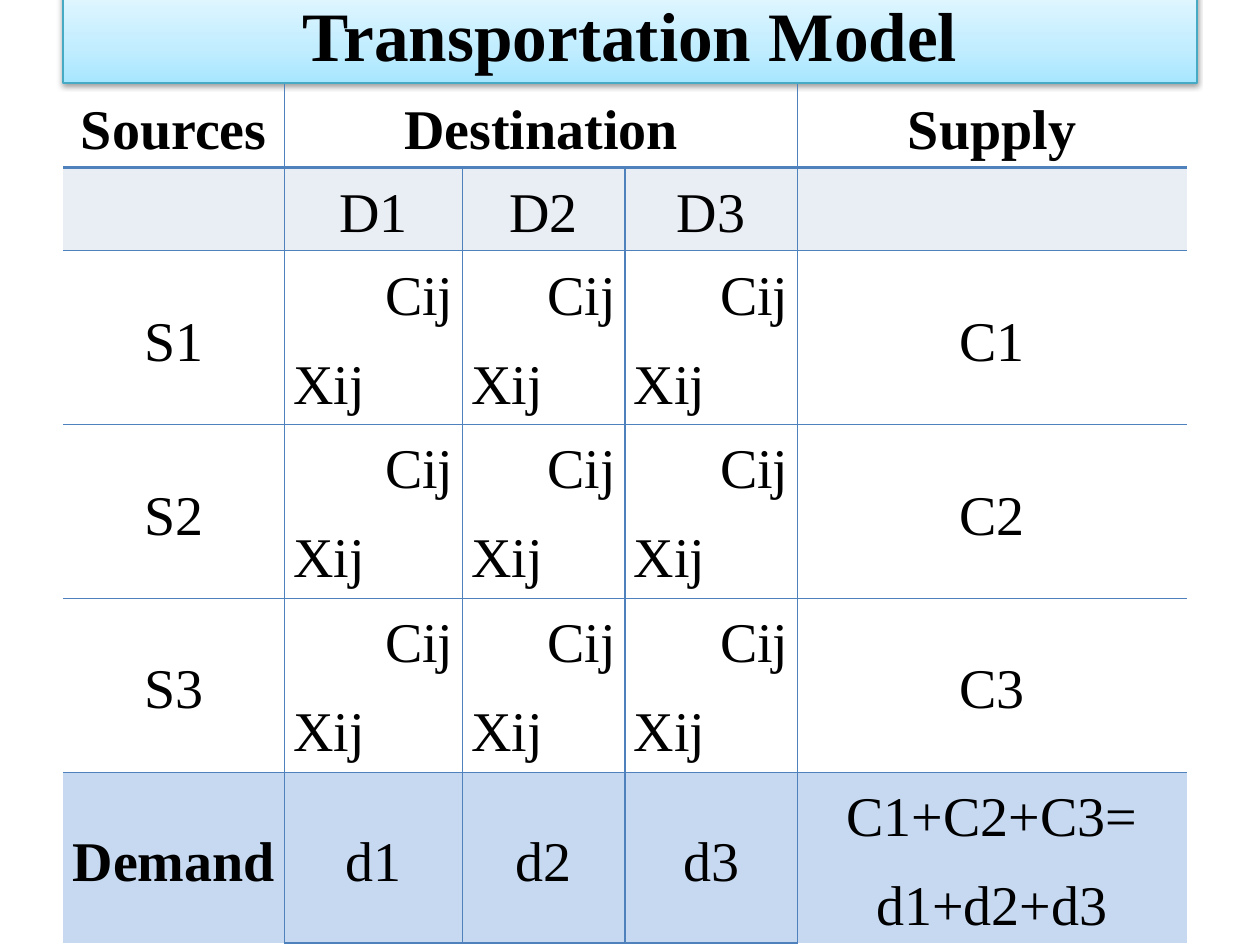
from lxml.etree import SubElement
from pptx import Presentation
from pptx.dml.color import RGBColor
from pptx.enum.shapes import MSO_SHAPE
from pptx.enum.text import MSO_ANCHOR as ANCHOR, PP_ALIGN as ALIGN
from pptx.oxml import parse_xml
from pptx.oxml.ns import nsdecls, qn
from pptx.util import Inches, Pt

BLACK = RGBColor(0x00, 0x00, 0x00)
WHITE = RGBColor(0xFF, 0xFF, 0xFF)
GRID_BLUE = RGBColor(0x4F, 0x81, 0xBD)
TITLE_EDGE = RGBColor(0x46, 0xAA, 0xC5)
BAND = RGBColor(0xE9, 0xED, 0xF4)
TOTAL = RGBColor(0xC6, 0xD9, 0xF1)
TITLE_STOPS = [
    (0, RGBColor(0xA7, 0xE6, 0xFF)),
    (35, RGBColor(0xC1, 0xED, 0xFF)),
    (100, RGBColor(0xE7, 0xF8, 0xFF)),
]

FONT = "Times New Roman"
LEFT = 0.5
COLS = [1.76, 1.41, 1.29, 1.37, 3.09]
ROWS = [0.66, 0.66, 1.38, 1.38, 1.38, 1.12]
ROW_FILLS = [None, BAND, None, None, WHITE, TOTAL]
MARGINS = {"margin_left": 0.07, "margin_right": 0.07,
           "margin_top": 0.04, "margin_bottom": 0.04}
PARAGRAPH = {"line_spacing": 1.15, "space_after": Pt(10)}

COST_CELL = "Cij\nXij"
HEADER = ["Sources", "Destination", "", "", "Supply"]
DESTINATIONS = ["", "D1", "D2", "D3", ""]
SOURCES = [[f"S{i}"] + [COST_CELL] * 3 + [f"C{i}"] for i in (1, 2, 3)]
DEMAND = ["Demand", "d1", "d2", "d3", "C1+C2+C3=\nd1+d2+d3"]
CONTENT = [HEADER, DESTINATIONS, *SOURCES, DEMAND]


def set_format(target, values):
    for name, value in values.items():
        setattr(target, name, value)


def add_run(p, text, size, bold):
    r = p.add_run()
    r.text = text
    set_format(r.font, {"name": FONT, "size": Pt(size), "bold": bold})
    r.font.color.rgb = BLACK


def add_title(slide, text):
    s = slide.shapes.add_shape(MSO_SHAPE.RECTANGLE, Inches(LEFT), Inches(-0.12),
                               Inches(9), Inches(0.78))
    s.line.color.rgb = TITLE_EDGE
    s.line.width = Pt(0.75)
    s.shadow.inherit = False
    stops = "".join(f'<a:gs pos="{pos * 1000}"><a:srgbClr val="{color}"/></a:gs>'
                    for pos, color in TITLE_STOPS)
    sp_pr = s._element.spPr
    sp_pr.find(qn("a:prstGeom")).addnext(parse_xml(
        f'<a:gradFill {nsdecls("a")} rotWithShape="1"><a:gsLst>{stops}</a:gsLst>'
        '<a:lin ang="16200000" scaled="1"/></a:gradFill>'))
    sp_pr.find(qn("a:effectLst")).append(parse_xml(
        f'<a:outerShdw {nsdecls("a")} blurRad="{Pt(3.1)}" dist="{Pt(1.6)}" '
        'dir="5400000" rotWithShape="0"><a:srgbClr val="000000">'
        '<a:alpha val="38000"/></a:srgbClr></a:outerShdw>'))
    tf = s.text_frame
    set_format(tf, {"word_wrap": True, "vertical_anchor": ANCHOR.MIDDLE})
    p = tf.paragraphs[0]
    p.alignment = ALIGN.CENTER
    add_run(p, text, 39.6, True)


def add_border(cell, side, width):
    """Draw one cell edge; a width of 0 leaves it open."""
    ln = SubElement(cell._tc.get_or_add_tcPr(), qn(f"a:ln{side}"), w=str(Pt(width)))
    if width:
        fill = SubElement(ln, qn("a:solidFill"))
        SubElement(fill, qn("a:srgbClr"), val=str(GRID_BLUE))
    else:
        SubElement(ln, qn("a:noFill"))


def border_widths(row, col):
    """Open outer frame, thick rule under the header, closed demand cells."""
    last_row, last_col = len(ROWS) - 1, len(COLS) - 1
    rules = [0, 2.25] + [1] * (last_row - 1) + [int(0 < col < last_col)]
    return {"L": int(col > 0), "R": int(col < last_col),
            "T": rules[row], "B": rules[row + 1]}


def fill_cell(cell, text, bold):
    is_cost = text == COST_CELL
    set_format(cell, {name: Inches(value) for name, value in MARGINS.items()})
    cell.vertical_anchor = ANCHOR.TOP if is_cost else ANCHOR.MIDDLE
    aligns = [ALIGN.RIGHT, ALIGN.LEFT] if is_cost else [ALIGN.CENTER] * 2
    tf = cell.text_frame
    for i, (line, align) in enumerate(zip(text.split("\n"), aligns)):
        p = tf.add_paragraph() if i else tf.paragraphs[0]
        set_format(p, {**PARAGRAPH, "alignment": align})
        add_run(p, line, 32, bold)


def add_model_table(slide):
    table = slide.shapes.add_table(
        len(ROWS), len(COLS), Inches(LEFT), Inches(0.67),
        Inches(sum(COLS)), Inches(sum(ROWS))).table
    set_format(table, {"first_row": False, "horz_banding": False})
    for column, width in zip(table.columns, COLS):
        column.width = Inches(width)
    for row, height in zip(table.rows, ROWS):
        row.height = Inches(height)
    table.cell(0, 1).merge(table.cell(0, 3))
    for i, (texts, color) in enumerate(zip(CONTENT, ROW_FILLS)):
        for j, text in enumerate(texts):
            cell = table.cell(i, j)
            for side, width in border_widths(i, j).items():
                add_border(cell, side, width)
            if color is None:
                cell.fill.background()
            else:
                cell.fill.solid()
                cell.fill.fore_color.rgb = color
            if text:
                fill_cell(cell, text, bold=i == 0 or text == "Demand")


def main():
    prs = Presentation()
    prs.slide_width, prs.slide_height = Inches(10), Inches(7.5)
    slide = prs.slides.add_slide(prs.slide_layouts[6])
    add_title(slide, "Transportation Model")
    add_model_table(slide)
    prs.save("out.pptx")


if __name__ == "__main__":
    main()
